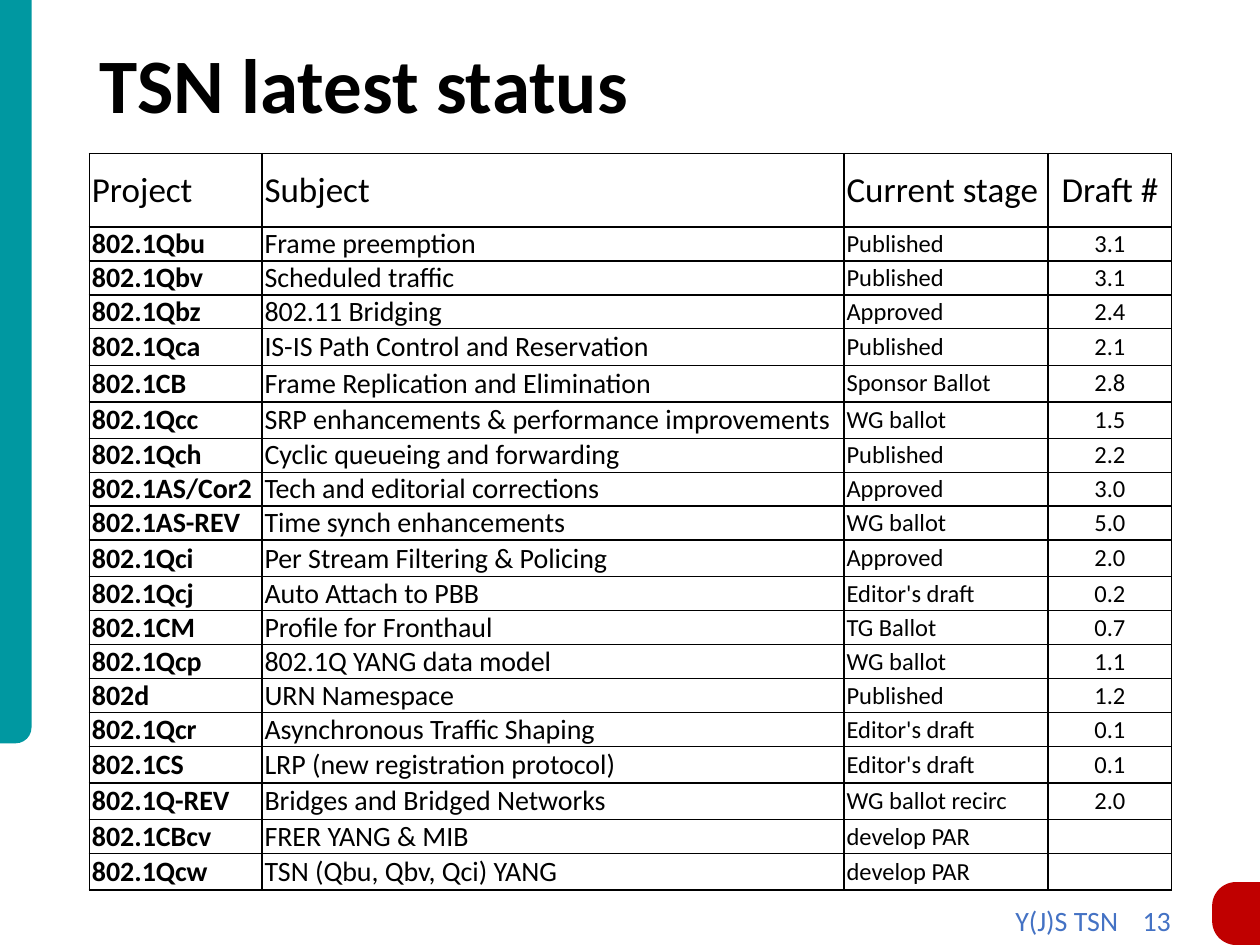
import pptx
import pptx.dml.color
import pptx.enum.shapes
import pptx.enum.text
import pptx.oxml
import pptx.oxml.ns
import pptx.util
from lxml import etree

Inches = pptx.util.Inches
Pt = pptx.util.Pt
KINDS = pptx.enum.shapes.MSO_SHAPE
LEFT = pptx.enum.text.PP_ALIGN.LEFT
MID = pptx.enum.text.PP_ALIGN.CENTER
CENTER = pptx.enum.text.MSO_ANCHOR.MIDDLE
qn = pptx.oxml.ns.qn

COLORS = {"teal": "0098A1", "red": "C00000", "ink": "000000", "blue": "4472C4"}
INSET = {
    "margin_left": Inches(0.02), "margin_right": Inches(0.02),
    "margin_top": 0, "margin_bottom": 0, "vertical_anchor": CENTER,
}
HEAD = ("Project", "Subject", "Current stage", "Draft #")
ROWS = [
    ("802.1Qbu", "Frame preemption", "Published", "3.1"),
    ("802.1Qbv", "Scheduled traffic", "Published", "3.1"),
    ("802.1Qbz", "802.11 Bridging", "Approved", "2.4"),
    ("802.1Qca", "IS-IS Path Control and Reservation", "Published", "2.1"),
    ("802.1CB", "Frame Replication and Elimination", "Sponsor Ballot", "2.8"),
    ("802.1Qcc", "SRP enhancements & performance improvements", "WG ballot", "1.5"),
    ("802.1Qch", "Cyclic queueing and forwarding", "Published", "2.2"),
    ("802.1AS/Cor2", "Tech and editorial corrections", "Approved", "3.0"),
    ("802.1AS-REV", "Time synch enhancements", "WG ballot", "5.0"),
    ("802.1Qci", "Per Stream Filtering & Policing", "Approved", "2.0"),
    ("802.1Qcj", "Auto Attach to PBB", "Editor's draft", "0.2"),
    ("802.1CM", "Profile for Fronthaul", "TG Ballot", "0.7"),
    ("802.1Qcp", "802.1Q YANG data model", "WG ballot", "1.1"),
    ("802d", "URN Namespace", "Published", "1.2"),
    ("802.1Qcr", "Asynchronous Traffic Shaping", "Editor's draft", "0.1"),
    ("802.1CS", "LRP (new registration protocol)", "Editor's draft", "0.1"),
    ("802.1Q-REV", "Bridges and Bridged Networks", "WG ballot recirc", "2.0"),
    ("802.1CBcv", "FRER YANG & MIB", "develop PAR", ""),
    ("802.1Qcw", "TSN (Qbu, Qbv, Qci) YANG", "develop PAR", ""),
]
WIDTHS = (1.37, 4.62, 1.62, 0.98)
SIZES = (16, 16, 14, 14)
TALL = (4, 5, 6, 10, 16, 17, 19)


def apply(item, values):
    """Set each named attribute of an item."""
    for name, value in values.items():
        setattr(item, name, value)


def tint(color):
    """Turn a color name into an RGB value."""
    return pptx.dml.color.RGBColor.from_string(COLORS[color])


def write(para, text, size, bold=False, color="ink"):
    """Add one styled run to a paragraph."""
    run = para.add_run()
    run.text = text
    apply(run.font, {"name": "Calibri", "size": Pt(size), "bold": bold})
    run.font.color.rgb = tint(color)


def label(slide, box, text, size, **style):
    """Add a text box and return it."""
    shape = slide.shapes.add_textbox(*map(Inches, box))
    shape.text_frame.word_wrap = True
    write(shape.text_frame.paragraphs[0], text, size, **style)
    return shape


def block(slide, kind, box, color, adjust, turn=0):
    """Add a plain filled shape and return it."""
    shape = slide.shapes.add_shape(kind, *map(Inches, box))
    shape.shadow.inherit = False
    shape.fill.solid()
    shape.fill.fore_color.rgb = tint(color)
    shape.line.fill.background()
    shape.rotation = turn
    for index, value in enumerate(adjust):
        shape.adjustments[index] = value
    return shape


def border(cell):
    """Draw a thin line on all four sides of a cell."""
    props = cell._tc.get_or_add_tcPr()
    for index, side in enumerate(("lnL", "lnR", "lnT", "lnB")):
        line = etree.Element(qn("a:" + side), w=str(Pt(1)))
        fill = etree.SubElement(line, qn("a:solidFill"))
        etree.SubElement(fill, qn("a:srgbClr"), val=COLORS["ink"])
        props.insert(index, line)


def fill(cell, text, size, bold, align):
    """Format one table cell and write its text."""
    apply(cell, INSET)
    cell.fill.background()
    border(cell)
    para = cell.text_frame.paragraphs[0]
    para.alignment = align
    if text:
        write(para, text, size, bold)
    else:
        etree.SubElement(para._p, qn("a:endParaRPr"), sz=str(size * 100))


def grid(slide):
    """Add the table of project status."""
    data = [HEAD] + ROWS
    high = [0.58] + [0.29 if row in TALL else 0.27 for row in range(1, len(data))]
    box = (0.71, 1.22, sum(WIDTHS), sum(high))
    table = slide.shapes.add_table(len(data), len(HEAD), *map(Inches, box)).table
    apply(table, {"first_row": False, "horz_banding": False})
    for col, width in zip(table.columns, WIDTHS):
        col.width = Inches(width)
    for row, height in enumerate(high):
        table.rows[row].height = Inches(height)
        for col, text in enumerate(data[row]):
            size = SIZES[col] if row else 20
            bold = row > 0 and col == 0
            align = MID if col == 3 else LEFT
            fill(table.cell(row, col), text, size, bold, align)


def footer(slide):
    """Add the footer with its page number at a tab stop."""
    shape = label(slide, (7.96, 7.12, 1.54, 0.34), "Y(J)S TSN\t13", 16, color="blue")
    props = shape.text_frame.paragraphs[0]._p.get_or_add_pPr()
    tabs = etree.SubElement(props, qn("a:tabLst"))
    etree.SubElement(tabs, qn("a:tab"), pos=str(Inches(1.01)), algn="l")


def main():
    """Build the slide and save it."""
    deck = pptx.Presentation()
    apply(deck, {"slide_width": Inches(10), "slide_height": Inches(7.5)})
    slide = deck.slides.add_slide(deck.slide_layouts[6])
    bar = block(slide, KINDS.ROUND_1_RECTANGLE, (0, 0, 0.25, 5.9), "teal", [0.5])
    bar.element.spPr.find(qn("a:xfrm")).set("flipV", "1")
    block(slide, KINDS.ROUND_2_SAME_RECTANGLE, (9.56, 7.06, 0.5, 0.38), "red", [0.5, 0], 270)
    title = label(slide, (0.69, 0.4, 8.62, 0.6), "TSN latest status", 44, bold=True)
    title.text_frame.vertical_anchor = CENTER
    title.text_frame.paragraphs[0].line_spacing = 0.9
    footer(slide)
    grid(slide)
    deck.save("out.pptx")


if __name__ == "__main__":
    main()
